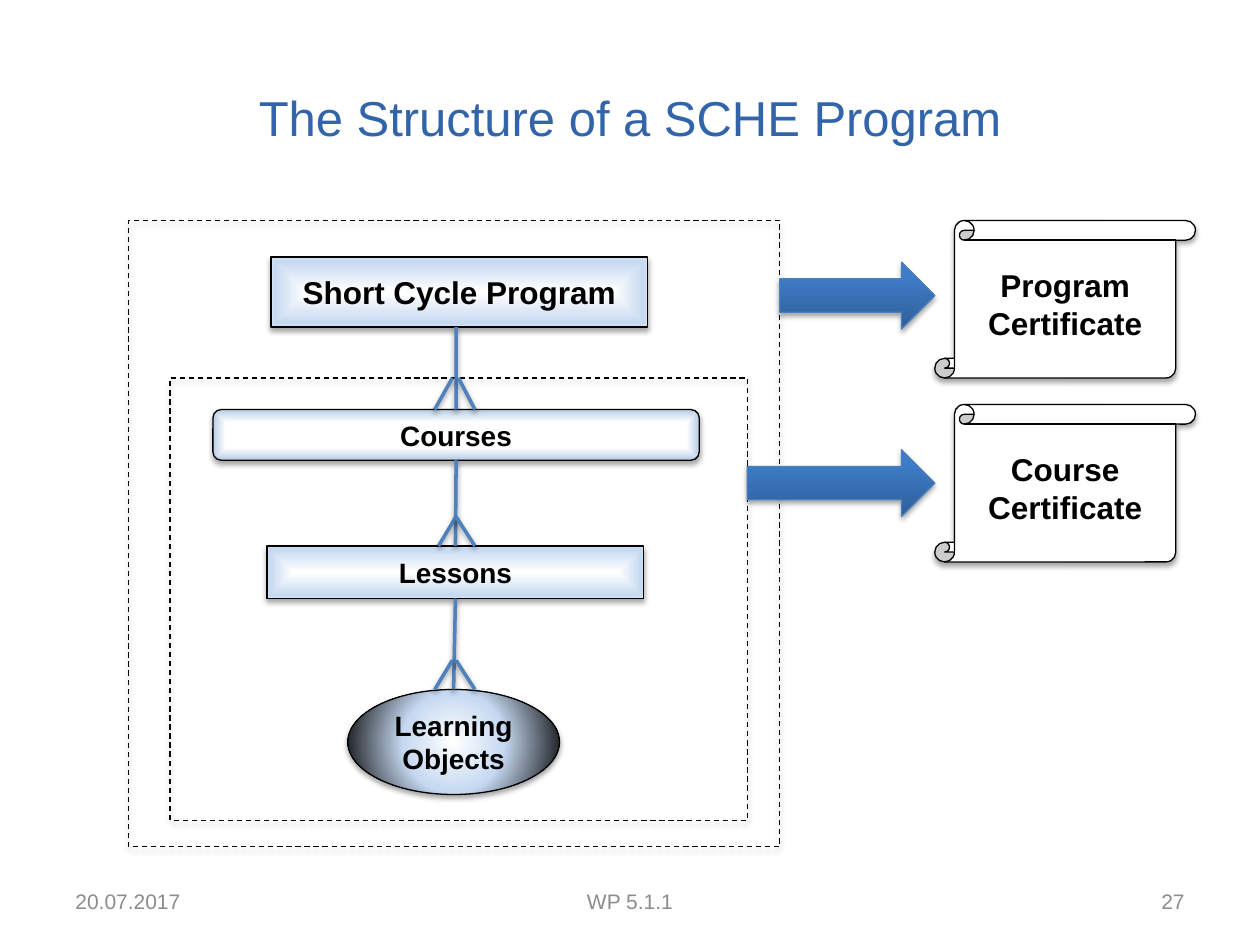
from lxml.etree import SubElement
from pptx import Presentation
from pptx.dml.color import RGBColor
from pptx.enum.dml import MSO_LINE
from pptx.enum.shapes import MSO_CONNECTOR, MSO_SHAPE as Preset
from pptx.enum.text import MSO_ANCHOR, PP_ALIGN as Align
from pptx.oxml.ns import qn
from pptx.util import Pt

# Content: lengths in points, boxes as (left, top, width, height)
TITLE = "The Structure of a SCHE Program"
BOX_STOPS = [(1, "FFFFFF"), (90, "C6D9F1"), (100, "DCE6F2")]
COURSE_STOPS = [(0, "FFFFFF"), (50, "FFFFFF"), (99, "B9CDE5"), (100, "DCE6F2")]
OBJECT_STOPS = [(0, "FFFFFF"), (43, "C6D9F1"), (100, "000000")]
ARROW_STOPS = [(0, "2F5F99"), (80, "3D7CC7"), (100, "3A7CCB")]

LEVELS = [  # text, preset, box, text size, gradient stops, gradient path
    ("Short Cycle Program", Preset.RECTANGLE, (154.8, 146.9, 215.3, 40), 18, BOX_STOPS, "rect"),
    ("Courses", Preset.ROUNDED_RECTANGLE, (121.7, 234, 277.9, 29), 16, COURSE_STOPS, "rect"),
    ("Lessons", Preset.RECTANGLE, (152.6, 312, 215.3, 30), 16, BOX_STOPS, "rect"),
    ("Learning Objects", Preset.OVAL, (198.7, 394, 121, 60), 16, OBJECT_STOPS, "circle"),
]
FRAMES = [(97.2, 216, 329.8, 252.7), (73.4, 126, 372.2, 357.8)]
CERTIFICATES = [("Program Certificate", 126), ("Course Certificate", 231.1)]
CERTIFICATE_LEFT = 534.2
ARROWS = [(427, 257), (445.6, 149.8)]  # left, top; all end at the certificates
STEM_X = 260.6
FEET = [  # top, (left toe start, end), (right toe start, end); one per link
    (216, (258.5, 248.4), (262, 271.4)),
    (295.2, (STEM_X, 250.6), (STEM_X, 271.4)),
    (377.3, (258.5, 248.4), (STEM_X, 271.4)),
]
FOOTERS = [  # text, left, width, alignment
    ("20.07.2017", 36, 168, Align.LEFT),
    ("WP 5.1.1", 246, 228, Align.CENTER),
    ("27", 516, 168, Align.RIGHT),
]

presentation = Presentation()
presentation.slide_width, presentation.slide_height = Pt(720), Pt(540)
slide = presentation.slides.add_slide(presentation.slide_layouts[5])


def color(value):
    return RGBColor.from_string(value)


def write(shape, text, size, ink, align=Align.CENTER, bold=False):
    frame = shape.text_frame
    frame.word_wrap = True
    frame.vertical_anchor = MSO_ANCHOR.MIDDLE
    frame.text = text
    paragraph = frame.paragraphs[0]
    paragraph.alignment = align
    font = paragraph.font
    font.name, font.size, font.bold = "Arial", Pt(size), bold
    font.color.rgb = color(ink)


def add_shadow(shape, opacity, distance):
    properties = shape._element.spPr
    effects = properties.find(qn("a:effectLst"))
    if effects is None:
        effects = SubElement(properties, qn("a:effectLst"))
    shadow = SubElement(effects, qn("a:outerShdw"), blurRad=str(Pt(3.1)),
                        dist=str(Pt(distance)), dir="5400000", rotWithShape="0")
    ink = SubElement(shadow, qn("a:srgbClr"), val="000000")
    SubElement(ink, qn("a:alpha"), val=str(opacity * 1000))


def fill_gradient(shape, stops, shade):
    """Shade is 'rect' or 'circle' from the centre, or a linear angle."""
    shape.fill.gradient()
    gradient = shape._element.spPr.find(qn("a:gradFill"))
    for child in list(gradient):
        gradient.remove(child)
    stop_list = SubElement(gradient, qn("a:gsLst"))
    for position, value in stops:
        stop = SubElement(stop_list, qn("a:gs"), pos=str(position * 1000))
        SubElement(stop, qn("a:srgbClr"), val=value)
    if isinstance(shade, str):
        center = SubElement(gradient, qn("a:path"), path=shade)
        SubElement(center, qn("a:fillToRect"), l="50000", t="50000", r="50000", b="50000")
    else:
        SubElement(gradient, qn("a:lin"), ang=str(shade * 60000), scaled="0")


def add_shape(preset, box, line="000000"):
    shape = slide.shapes.add_shape(preset, *map(Pt, box))
    shape.line.color.rgb = color(line)
    shape.line.width = Pt(0.75)
    shape.shadow.inherit = False
    add_shadow(shape, 35, 1.8)
    return shape


def add_line(x1, y1, x2, y2):
    line = slide.shapes.add_connector(MSO_CONNECTOR.STRAIGHT, *map(Pt, (x1, y1, x2, y2)))
    line.line.color.rgb = color("4F81BD")
    line.line.width = Pt(2)
    add_shadow(line, 38, 1.6)
    return line


# Title
title = slide.shapes.title
title.left, title.top, title.width, title.height = map(Pt, (36, 21.6, 648, 90))
write(title, TITLE, 28, "3264AA")

# Levels of the program
levels = []
for text, preset, box, size, stops, shade in LEVELS:
    level = add_shape(preset, box)
    fill_gradient(level, stops, shade)
    write(level, text, size, "000000", bold=True)
    levels.append(level)

# Dashed frames
for box in FRAMES:
    frame = add_shape(Preset.RECTANGLE, box)
    frame.fill.background()
    frame.line.dash_style = MSO_LINE.DASH

# Certificates and the arrows to them
for text, top in CERTIFICATES:
    scroll = add_shape(Preset.VERTICAL_SCROLL, (CERTIFICATE_LEFT, top, 149, 90))
    scroll.fill.solid()
    scroll.fill.fore_color.rgb = color("FFFFFF")
    write(scroll, text, 18, "000000", bold=True)
for left, top in ARROWS:
    arrow = add_shape(Preset.RIGHT_ARROW, (left, top, CERTIFICATE_LEFT - left, 38.2), "4B7EBC")
    fill_gradient(arrow, ARROW_STOPS, 270)

# One-to-many links: a stem and two toes
for index, (foot_top, *toes) in enumerate(FEET):
    upper, lower = levels[index:index + 2]
    start = upper.top.pt + upper.height.pt
    end = lower.top.pt
    stem = add_line(STEM_X, start, STEM_X, end)
    if index > 0:  # the first stem starts left of the middle of its box
        stem.begin_connect(upper, 2)
    stem.end_connect(lower, 0)
    for toe_start, toe_end in toes:
        add_line(toe_start, foot_top, toe_end, end)

# Footer
for text, left, width, align in FOOTERS:
    footer = slide.shapes.add_textbox(Pt(left), Pt(500.5), Pt(width), Pt(28.8))
    write(footer, text, 12, "8C8C8C", align)

presentation.save("out.pptx")
